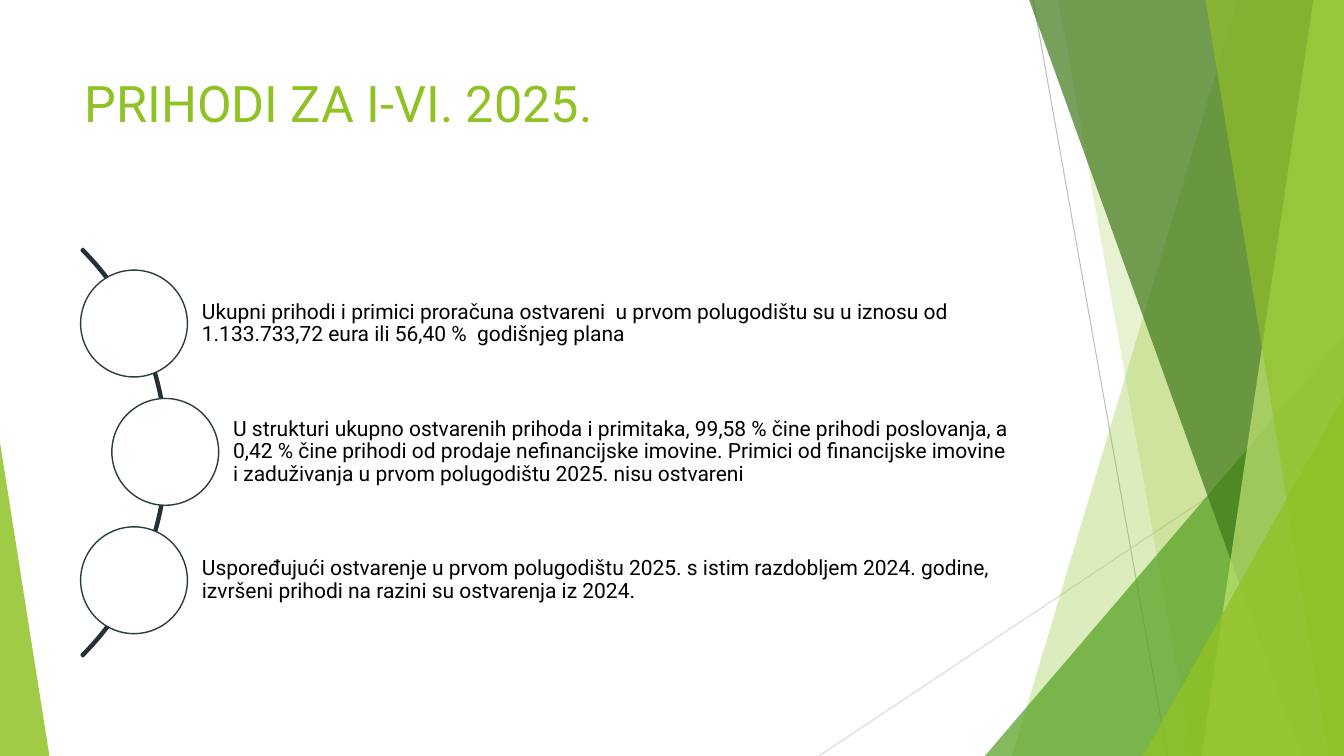
"""Build the slide on half-year budget revenue, with a faceted backdrop and an arc of three points."""
from dataclasses import dataclass

from lxml.etree import SubElement
from pptx import Presentation
from pptx.dml.color import RGBColor
from pptx.enum.shapes import MSO_CONNECTOR, MSO_SHAPE
from pptx.enum.text import MSO_ANCHOR, MSO_AUTO_SIZE, PP_ALIGN
from pptx.oxml.ns import qn
from pptx.shapes.autoshape import Shape
from pptx.slide import Slide
from pptx.text.text import TextFrame
from pptx.util import Inches, Pt

COLUMNS, ROWS = 40, 22.5
CELL = Inches(1 / 3)
FONT = "Roboto"
COLORS = {
    "lime": "90C226", "green": "54A021", "forest": "3F7819", "pale": "C0E474",
    "silver": "BFBFBF", "mist": "D9D9D9", "white": "FFFFFF", "black": "000000",
    "slate": "2C3C43", "arc": "233036",
}
TITLE = "PRIHODI ZA I-VI. 2025."
CIRCLE_SIZE, LABEL_HEIGHT, LABEL_RIGHT = 3.18, 2.55, 30.24
FIRST_CENTER, POINT_PITCH = 9.63, 3.82
ARC_LEFT, ARC_TOP, ARC_SIZE = -12.18, 4.89, 17.16


@dataclass(frozen=True)
class Ray:
    start: tuple[float, float]
    end: tuple[float, float]
    color: str


@dataclass(frozen=True)
class Facet:
    top_column: float
    bottom_column: float
    color: str
    opacity: int


@dataclass(frozen=True)
class Wedge:
    left: float
    top: float
    width: float
    apex: float
    color: str
    opacity: int


@dataclass(frozen=True)
class Point:
    circle_left: float
    text: str


RAYS = [
    Ray((30.75, 0), (34.75, ROWS), "silver"),
    Ray((COLUMNS, 12.1), (24.37, ROWS), "mist"),
]
BACKDROP = [
    Facet(36.84, 30.12, "lime", 30),
    Facet(31.5, 35.49, "lime", 20),
    Wedge(29.31, 10, 10.69, 1, "green", 72),
    Facet(30.63, 38.73, "forest", 70),
    Facet(39.09, 35.76, "pale", 70),
    Facet(35.88, 39.54, "lime", 65),
    Wedge(34.02, 11.8, 5.98, 1, "lime", 80),
    Wedge(0, 13.17, 1.47, 0, "lime", 85),
]
POINTS = [
    Point(2.4, "Ukupni prihodi i primici proračuna ostvareni  u prvom polugodištu su u iznosu od "
               "1.133.733,72 eura ili 56,40 %  godišnjeg plana"),
    Point(3.33, "U strukturi ukupno ostvarenih prihoda i primitaka, 99,58 % čine prihodi poslovanja, a "
                "0,42 % čine prihodi od prodaje nefinancijske imovine. Primici od financijske imovine "
                "i zaduživanja u prvom polugodištu 2025. nisu ostvareni"),
    Point(2.4, "Uspoređujući ostvarenje u prvom polugodištu 2025. s istim razdobljem 2024. godine, "
               "izvršeni prihodi na razini su ostvarenja iz 2024."),
]


def cells(count: float) -> int:
    return round(count * CELL)


def rgb(name: str) -> RGBColor:
    return RGBColor.from_string(COLORS[name])


def add_preset(slide: Slide, kind: MSO_SHAPE, left: float, top: float, width: float, height: float) -> Shape:
    return slide.shapes.add_shape(kind, cells(left), cells(top), cells(width), cells(height))


def paint(shape: Shape, fill: str | None, opacity: int = 100, line: str | None = None, weight: float = 1) -> None:
    shape.shadow.inherit = False
    if fill:
        shape.fill.solid()
        shape.fill.fore_color.rgb = rgb(fill)
        if opacity < 100:
            color = shape.element.spPr.find(qn("a:solidFill")).find(qn("a:srgbClr"))
            SubElement(color, qn("a:alpha"), val=str(opacity * 1000))
    else:
        shape.fill.background()
    if line:
        shape.line.color.rgb = rgb(line)
        shape.line.width = Pt(weight)
    else:
        shape.line.fill.background()


def write(frame: TextFrame, text: str, size: float, color: str) -> None:
    frame.text = text
    frame.word_wrap = True
    frame.auto_size = MSO_AUTO_SIZE.NONE
    paragraph = frame.paragraphs[0]
    paragraph.alignment = PP_ALIGN.LEFT
    font = paragraph.runs[0].font
    font.name, font.size, font.color.rgb = FONT, Pt(size), rgb(color)


def draw_ray(slide: Slide, ray: Ray) -> None:
    ends = [cells(value) for value in (*ray.start, *ray.end)]
    connector = slide.shapes.add_connector(MSO_CONNECTOR.STRAIGHT, *ends)
    connector.line.color.rgb = rgb(ray.color)
    connector.line.width = Pt(0.75)
    SubElement(connector.element.spPr, qn("a:effectLst"))


def draw_backdrop_piece(slide: Slide, piece: Facet | Wedge) -> None:
    if isinstance(piece, Facet):
        builder = slide.shapes.build_freeform(cells(piece.top_column), 0)
        corners = [(COLUMNS, 0), (COLUMNS, ROWS), (piece.bottom_column, ROWS)]
        builder.add_line_segments([(cells(column), cells(row)) for column, row in corners])
        shape = builder.convert_to_shape()
    else:
        shape = add_preset(slide, MSO_SHAPE.ISOSCELES_TRIANGLE, piece.left, piece.top,
                           piece.width, ROWS - piece.top)
        shape.adjustments[0] = piece.apex
    paint(shape, piece.color, piece.opacity)


def draw_title(slide: Slide) -> None:
    title = slide.shapes.title
    title.left, title.top, title.width, title.height = map(cells, (2.22, 2, 28.2, 4.32))
    write(title.text_frame, TITLE, 36, "lime")
    title.text_frame.vertical_anchor = MSO_ANCHOR.TOP


def draw_arc(slide: Slide) -> None:
    arc = add_preset(slide, MSO_SHAPE.BLOCK_ARC, ARC_LEFT, ARC_TOP, ARC_SIZE, ARC_SIZE)
    for index, value in enumerate((189, 27, 0.004)):
        arc.adjustments[index] = value
    paint(arc, None, line="arc", weight=1.5)


def draw_point(slide: Slide, point: Point, center: float) -> None:
    label_left = point.circle_left + CIRCLE_SIZE / 2
    label = add_preset(slide, MSO_SHAPE.RECTANGLE, label_left, center - LABEL_HEIGHT / 2,
                       LABEL_RIGHT - label_left, LABEL_HEIGHT)
    paint(label, "white")
    frame = label.text_frame
    write(frame, point.text, 15, "black")
    frame.vertical_anchor = MSO_ANCHOR.MIDDLE
    frame.margin_left = cells(2.02)
    frame.margin_top = frame.margin_right = frame.margin_bottom = cells(0.12)
    frame.paragraphs[0].line_spacing = 0.9
    circle = add_preset(slide, MSO_SHAPE.OVAL, point.circle_left, center - CIRCLE_SIZE / 2,
                        CIRCLE_SIZE, CIRCLE_SIZE)
    paint(circle, "white", line="slate")


def main() -> None:
    presentation = Presentation()
    presentation.slide_width, presentation.slide_height = cells(COLUMNS), cells(ROWS)
    slide = presentation.slides.add_slide(presentation.slide_layouts[5])
    for ray in RAYS:
        draw_ray(slide, ray)
    for piece in BACKDROP:
        draw_backdrop_piece(slide, piece)
    draw_title(slide)
    draw_arc(slide)
    for index, point in enumerate(POINTS):
        draw_point(slide, point, FIRST_CENTER + index * POINT_PITCH)
    presentation.save("out.pptx")


if __name__ == "__main__":
    main()
